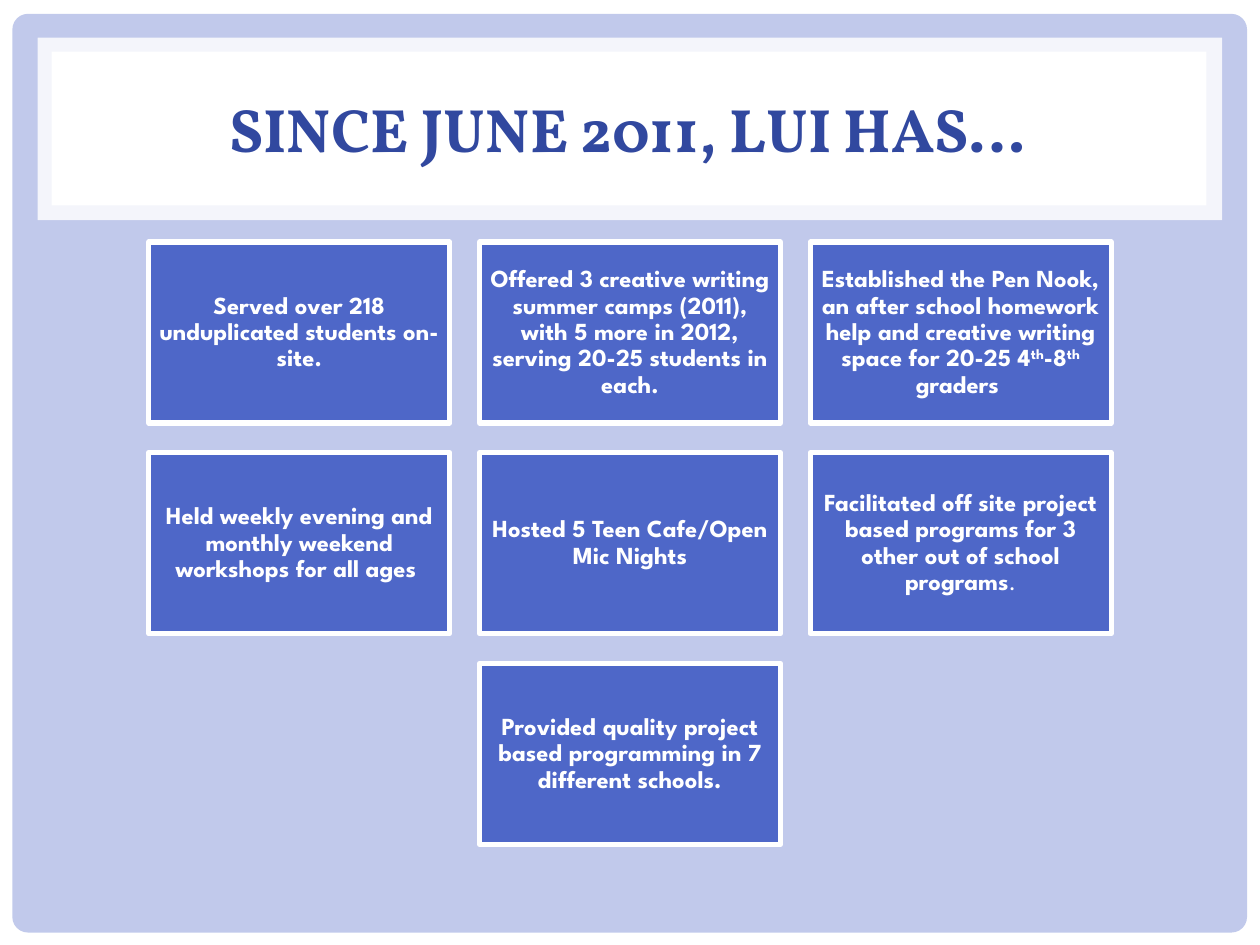
import pptx
import pptx.dml.color
import pptx.enum.shapes
import pptx.enum.text
import pptx.oxml.ns
import pptx.util
from lxml import etree

Cm = pptx.util.Cm
Pt = pptx.util.Pt
RGBColor = pptx.dml.color.RGBColor
SHAPE = pptx.enum.shapes.MSO_SHAPE
CENTER = pptx.enum.text.PP_ALIGN.CENTER
MIDDLE = pptx.enum.text.MSO_ANCHOR.MIDDLE

WHITE = RGBColor(0xFF, 0xFF, 0xFF)
BLUE = RGBColor(0x4E, 0x67, 0xC8)
NAVY = RGBColor(0x31, 0x48, 0x9F)

PLAIN, RAISED, LIGHT = "plain", "raised", "light"
COLUMNS = 3
GAP = 0.6
ACHIEVEMENTS = [
    [("Served over 218 unduplicated students on-site.", PLAIN)],
    [("Offered 3 creative writing summer camps (2011), with 5 more in 2012, "
      "serving 20-25 students in each.", PLAIN)],
    [("Established the Pen Nook, an after school homework help and creative "
      "writing space for 20-25 4", PLAIN),
     ("th", RAISED), ("-8", PLAIN), ("th", RAISED), (" graders ", PLAIN)],
    [("Held weekly evening and monthly weekend workshops for all ages ", PLAIN)],
    [("Hosted 5 Teen Cafe/Open Mic Nights", PLAIN)],
    [("Facilitated off site project based programs for 3 other out of school "
      "programs", PLAIN), (".", LIGHT)],
    [("Provided quality project based programming in 7 different schools.", PLAIN)],
]


def add_panel(page, kind, box, color, opacity=100):
    """Add a borderless filled shape at a box given in centimetres."""
    panel = page.shapes.add_shape(kind, *map(Cm, box))
    panel.shadow.inherit = False
    panel.fill.solid()
    panel.fill.fore_color.rgb = color
    panel.line.fill.background()
    if opacity < 100:
        tint = panel.element.spPr.find(".//" + pptx.oxml.ns.qn("a:srgbClr"))
        alpha = etree.SubElement(tint, pptx.oxml.ns.qn("a:alpha"))
        alpha.set("val", str(opacity * 1000))
    return panel


def add_backdrop(page, box):
    """Draw the rounded tinted panel behind the whole slide."""
    panel = add_panel(page, SHAPE.ROUNDED_RECTANGLE, box, BLUE, 35)
    panel.adjustments[0] = 0.017


def add_heading(page, box, text):
    """Draw the title frame in a box and set the title within it."""
    left, top, width, height = box
    add_panel(page, SHAPE.RECTANGLE, box, WHITE, 83)
    inner = (left + 0.28, top + 0.28, width - 0.6, height - 0.58)
    add_panel(page, SHAPE.RECTANGLE, inner, WHITE)

    title = page.shapes.title
    title.left, title.top = Cm(left + 0.43), Cm(top + 0.38)
    title.width, title.height = Cm(width - 0.94), Cm(height - 0.78)
    title.element.getparent().append(title.element)
    title.text_frame.text = text
    title.text_frame.vertical_anchor = MIDDLE
    para = title.text_frame.paragraphs[0]
    para.alignment = CENTER
    para.font.name = "Vollkorn"
    para.font.size = Pt(35)
    para.font.bold = True
    para.font.color.rgb = NAVY


def add_card(page, box, pieces):
    """Draw one white-edged card with its centred statement."""
    card = add_panel(page, SHAPE.RECTANGLE, box, BLUE)
    card.line.color.rgb = WHITE
    card.line.width = Pt(3)
    frame = card.text_frame
    frame.word_wrap = True
    frame.vertical_anchor = MIDDLE
    frame.margin_left = frame.margin_right = Cm(0.15)
    frame.margin_top = frame.margin_bottom = Cm(0.15)
    para = frame.paragraphs[0]
    para.alignment = CENTER
    para.line_spacing = 0.9
    para.font.name = "League Spartan"
    para.font.size = Pt(14)
    para.font.bold = True
    para.font.color.rgb = WHITE
    for text, style in pieces:
        span = para.add_run()
        span.text = text
        if style == RAISED:
            span.font._element.set("baseline", "30000")
        elif style == LIGHT:
            span.font.bold = False


def add_card_grid(page, box, cards):
    """Lay cards out in rows within a box, centring a short last row."""
    left, top, width, height = box
    rows = [cards[i:i + COLUMNS] for i in range(0, len(cards), COLUMNS)]
    card_width = (width - GAP * (COLUMNS - 1)) / COLUMNS
    card_height = (height - GAP * (len(rows) - 1)) / len(rows)
    for row, row_cards in enumerate(rows):
        indent = (COLUMNS - len(row_cards)) * (card_width + GAP) / 2
        for column, pieces in enumerate(row_cards):
            x = left + indent + column * (card_width + GAP)
            y = top + row * (card_height + GAP)
            add_card(page, (x, y, card_width, card_height), pieces)


def main():
    """Build the achievements slide and save it."""
    deck = pptx.Presentation()
    deck.slide_width, deck.slide_height = Cm(25.4), Cm(19.05)
    page = deck.slides.add_slide(deck.slide_layouts.get_by_name("Title Only"))
    add_backdrop(page, (0.25, 0.28, 24.89, 18.52))
    add_heading(page, (0.76, 0.76, 23.88, 3.68), "SINCE JUNE 2011, LUI HAS…")
    add_card_grid(page, (3, 4.88, 19.4, 12.14), ACHIEVEMENTS)
    deck.save("out.pptx")


if __name__ == "__main__":
    main()
